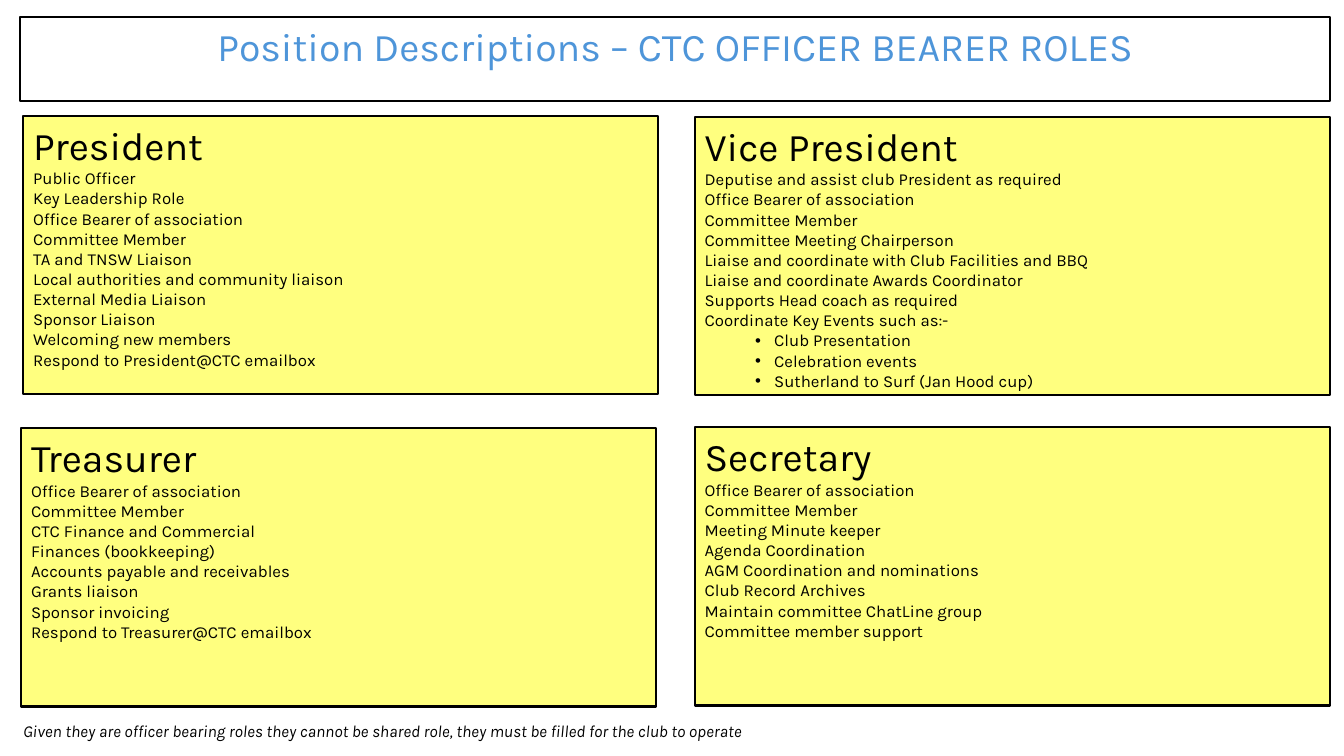
from dataclasses import dataclass

from lxml.etree import SubElement
from pptx import Presentation
from pptx.dml.color import RGBColor
from pptx.enum.shapes import MSO_SHAPE as Shape
from pptx.enum.text import MSO_ANCHOR as Anchor, MSO_AUTO_SIZE as Fit, PP_ALIGN as Align
from pptx.oxml.ns import qn
from pptx.util import Inches, Pt

FONT = "Karla"
BLACK, BLUE, YELLOW = "000000", "4E95D9", "FFFF00"
WIDTH, HEIGHT = 6.3, 2.76


@dataclass
class Role:
    left: float
    top: float
    name: str
    duties: tuple[str, ...]
    events: tuple[str, ...] = ()


ROLES = [
    Role(0.23, 1.15, "President", (
        "Public Officer",
        "Key Leadership Role",
        "Office Bearer of association",
        "Committee Member",
        "TA and TNSW Liaison",
        "Local authorities and community liaison",
        "External Media Liaison",
        "Sponsor Liaison",
        "Welcoming new members",
        "Respond to President@CTC emailbox",
    )),
    Role(0.21, 4.25, "Treasurer", (
        "Office Bearer of association",
        "Committee Member",
        "CTC Finance and Commercial",
        "Finances (bookkeeping)",
        "Accounts payable and receivables",
        "Grants liaison",
        "Sponsor invoicing",
        "Respond to Treasurer@CTC emailbox",
    )),
    Role(6.89, 4.24, "Secretary", (
        "Office Bearer of association",
        "Committee Member",
        "Meeting Minute keeper",
        "Agenda Coordination",
        "AGM Coordination and nominations",
        "Club Record Archives",
        "Maintain committee ChatLine group",
        "Committee member support",
    )),
    Role(6.89, 1.16, "Vice President", (
        "Deputise and assist club President as required",
        "Office Bearer of association",
        "Committee Member",
        "Committee Meeting Chairperson",
        "Liaise and coordinate with Club Facilities and BBQ",
        "Liaise and coordinate Awards Coordinator",
        "Supports Head coach as required",
        "Coordinate Key Events such as:-",
    ), (
        "Club Presentation",
        "Celebration events",
        "Sutherland to Surf (Jan Hood cup)",
    )),
]


def color(code: str) -> RGBColor:
    return RGBColor.from_string(code)


def write(para, text: str, size: float = 12, code: str = BLACK,
          align: Align = Align.LEFT, italic: bool = False) -> None:
    para.alignment = align
    run = para.add_run()
    run.text = text
    font = run.font
    font.name, font.size, font.italic = FONT, Pt(size), italic
    font.color.rgb = color(code)


def bullet(para) -> None:
    para.level = 1
    props = para._p.get_or_add_pPr()
    props.set("marL", str(Inches(0.69)))
    props.set("indent", str(Inches(-0.19)))
    SubElement(props, qn("a:buFont"), typeface="Arial")
    SubElement(props, qn("a:buChar"), char="•")


def border(shape) -> None:
    shape.line.color.rgb = color(BLACK)
    shape.line.width = Pt(1.5)


def place(shape, left: float, top: float, width: float, height: float) -> None:
    shape.left, shape.top = Inches(left), Inches(top)
    shape.width, shape.height = Inches(width), Inches(height)


def draw(slide, role: Role) -> None:
    card = slide.shapes.add_shape(Shape.RECTANGLE, Inches(role.left), Inches(role.top),
                                  Inches(WIDTH), Inches(HEIGHT))
    card.shadow.inherit = False
    card.fill.solid()
    card.fill.fore_color.rgb = color(YELLOW)
    # Half-transparent fill
    tint = card._element.spPr.find(".//" + qn("a:srgbClr"))
    SubElement(tint, qn("a:alpha"), val="50000")
    border(card)

    frame = card.text_frame
    frame.word_wrap = True
    frame.vertical_anchor = Anchor.TOP
    write(frame.paragraphs[0], role.name, 28)
    for duty in role.duties:
        write(frame.add_paragraph(), duty)
    for event in role.events:
        para = frame.add_paragraph()
        write(para, event)
        bullet(para)


def main() -> None:
    deck = Presentation()
    deck.slide_width, deck.slide_height = Inches(13.33), Inches(7.5)
    slide = deck.slides.add_slide(deck.slide_layouts[5])

    # Title
    title = slide.shapes.title
    place(title, 0.2, 0.17, 12.99, 0.57)
    border(title)
    frame = title.text_frame
    frame.word_wrap = True
    frame.auto_size = Fit.SHAPE_TO_FIT_TEXT
    frame.vertical_anchor = Anchor.TOP
    write(frame.paragraphs[0], "Position Descriptions – CTC OFFICER BEARER ROLES",
          28, BLUE, Align.CENTER)

    # Role cards
    for role in ROLES:
        draw(slide, role)

    # Footnote
    note = slide.shapes.add_textbox(Inches(0.13), Inches(7.1), Inches(10.85), Inches(0.3))
    frame = note.text_frame
    frame.word_wrap = True
    frame.auto_size = Fit.SHAPE_TO_FIT_TEXT
    write(frame.paragraphs[0],
          "Given they are officer bearing roles they cannot be shared role, "
          "they must be filled for the club to operate", italic=True)

    deck.save("out.pptx")


if __name__ == "__main__":
    main()
